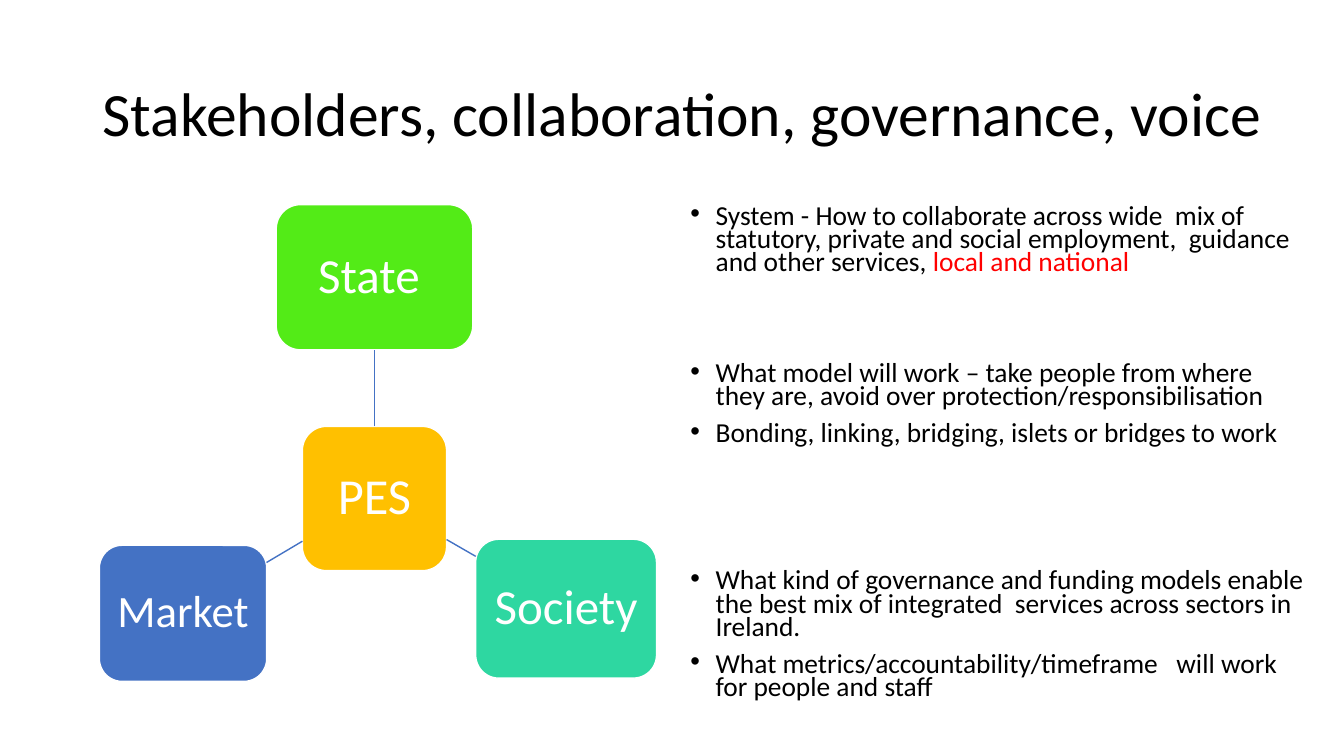
from lxml import etree
from pptx import Presentation
from pptx import util as u
from pptx.dml.color import RGBColor
from pptx.enum import shapes, text
from pptx.oxml import ns

BLACK = RGBColor(0x00, 0x00, 0x00)
WHITE = RGBColor(0xFF, 0xFF, 0xFF)
RED = RGBColor(0xFF, 0x00, 0x00)
BLUE = RGBColor(0x44, 0x72, 0xC4)
AMBER = RGBColor(0xFF, 0xC0, 0x00)
GREEN = RGBColor(0x53, 0xEB, 0x17)
TEAL = RGBColor(0x2E, 0xD7, 0xA1)

# Label, left, top, width, height, fill, text size
NODES = [
    ("PES", 216, 304.6, 103, 103, AMBER, 36),
    ("State ", 197.3, 146.2, 140.4, 103.7, GREEN, 35),
    ("Society ", 339.8, 385.2, 129.2, 99.2, TEAL, 35),
    ("Market ", 71, 389.5, 119.5, 97.2, BLUE, 32),
]

# From the central node to each stakeholder
LINKS = [
    (267.5, 304.6, 267.5, 249.9),
    (319, 385.4, 339.8, 397.4),
    (216, 386.6, 190.4, 401.8),
]

# Space before, then runs of text and colour
BULLETS = [
    (0, [("System - How to collaborate across wide  mix of statutory, private "
          "and social employment,  guidance and other services, ", BLACK),
         ("local and national", RED)]),
    (63, [("What model will work – take people from where they are, "
           "avoid over protection/responsibilisation", BLACK)]),
    (10, [("Bonding, linking, bridging, islets or bridges to work", BLACK)]),
    (89, [("What kind of governance and funding models enable the best mix "
           "of integrated  services across sectors in Ireland.", BLACK)]),
    (10, [("What metrics/accountability/timeframe   will work  "
           "for people and staff", BLACK)]),
]


class StakeholderSlide:
    """Holds the style and the current slide; lengths are in points."""

    font_name = "Calibri"
    line_width = 1
    hanging = 18

    def __init__(self, slide):
        self.slide = slide

    def place(self, shape, left, top, width, height):
        shape.left, shape.top = u.Pt(left), u.Pt(top)
        shape.width, shape.height = u.Pt(width), u.Pt(height)

    def style(self, paragraph, size, color, spacing=0.9):
        paragraph.line_spacing = spacing
        font = paragraph.font
        font.name, font.size = self.font_name, u.Pt(size)
        font.color.rgb = color

    def title(self, words, *box):
        shape = self.slide.shapes.title
        self.place(shape, *box)
        frame = shape.text_frame
        frame.text = words
        frame.auto_size = text.MSO_AUTO_SIZE.NONE
        frame.vertical_anchor = text.MSO_ANCHOR.MIDDLE
        paragraph = frame.paragraphs[0]
        paragraph.alignment = text.PP_ALIGN.LEFT
        self.style(paragraph, 44, BLACK)

    def bullets(self, items, *box):
        shape = self.slide.placeholders[1]
        self.place(shape, *box)
        frame = shape.text_frame
        frame.auto_size = text.MSO_AUTO_SIZE.NONE
        for index, (space_before, runs) in enumerate(items):
            paragraph = frame.add_paragraph() if index else frame.paragraphs[0]
            properties = paragraph._p.get_or_add_pPr()
            properties.set("marL", str(u.Pt(self.hanging)))
            properties.set("indent", str(-u.Pt(self.hanging)))
            bullet = etree.SubElement(properties, ns.qn("a:buChar"))
            bullet.set("char", "•")
            paragraph.space_before = u.Pt(space_before)
            self.style(paragraph, 19.6, BLACK, spacing=0.7)
            for words, color in runs:
                run = paragraph.add_run()
                run.text = words
                if color != BLACK:
                    run.font.color.rgb = color

    def node(self, label, left, top, width, height, fill, size):
        shape = self.slide.shapes.add_shape(
            shapes.MSO_SHAPE.ROUNDED_RECTANGLE,
            u.Pt(left), u.Pt(top), u.Pt(width), u.Pt(height))
        shape.shadow.inherit = False
        shape.fill.solid()
        shape.fill.fore_color.rgb = fill
        shape.line.color.rgb = WHITE
        shape.line.width = u.Pt(self.line_width)
        frame = shape.text_frame
        frame.word_wrap = True
        frame.vertical_anchor = text.MSO_ANCHOR.MIDDLE
        frame.margin_left = frame.margin_right = u.Pt(7)
        frame.margin_top = frame.margin_bottom = u.Pt(7)
        frame.text = label
        paragraph = frame.paragraphs[0]
        paragraph.alignment = text.PP_ALIGN.CENTER
        self.style(paragraph, size, WHITE)

    def link(self, *ends):
        connector = self.slide.shapes.add_connector(
            shapes.MSO_CONNECTOR.STRAIGHT, *(u.Pt(value) for value in ends))
        connector.line.color.rgb = BLUE
        connector.line.width = u.Pt(self.line_width)
        etree.SubElement(connector._element.spPr, ns.qn("a:effectLst"))


def main():
    presentation = Presentation()
    presentation.slide_width, presentation.slide_height = u.Pt(960), u.Pt(540)
    slide = presentation.slides.add_slide(presentation.slide_layouts[1])
    page = StakeholderSlide(slide)

    # Title and discussion points
    page.title("Stakeholders, collaboration, governance, voice",
               66, 34.5, 852.5, 98)
    page.bullets(BULLETS, 486, 144, 454.3, 384.5)

    # Stakeholder diagram
    for node in NODES:
        page.node(*node)
    for link in LINKS:
        page.link(*link)

    presentation.save("out.pptx")


if __name__ == "__main__":
    main()
